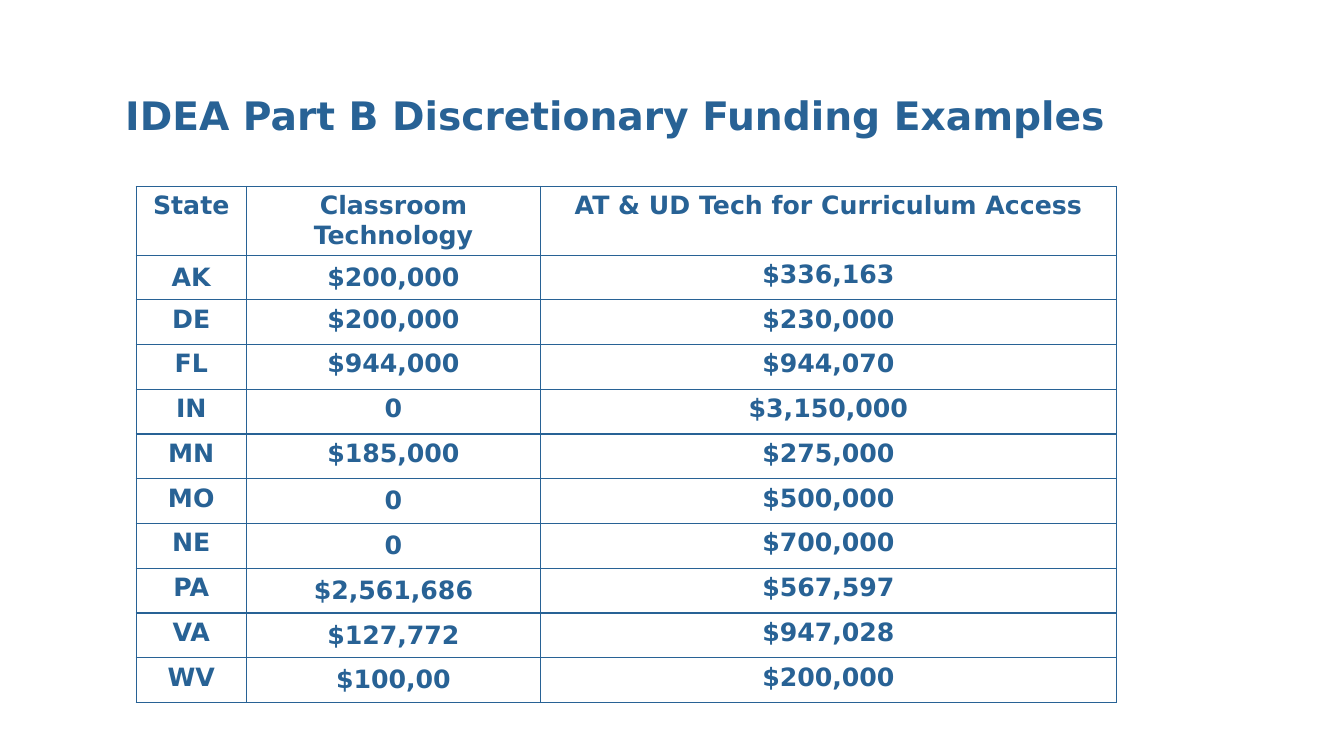
from lxml import etree
from pptx import Presentation, util as u
from pptx.dml import color
from pptx.enum import text
from pptx.oxml import ns

BLUE, WHITE = "286295", "FFFFFF"
TOP, MIDDLE = text.MSO_ANCHOR.TOP, text.MSO_ANCHOR.MIDDLE

presentation = Presentation()
presentation.slide_width = u.Inches(13.33)
presentation.slide_height = u.Inches(7.5)
# One percent of the slide in each direction
across = presentation.slide_width / 100
down = presentation.slide_height / 100
slide = presentation.slides.add_slide(presentation.slide_layouts[5])


def rgb(value):
    return color.RGBColor.from_string(value)


def write(frame, wording, size, anchor):
    frame.text = wording
    frame.word_wrap = True
    frame.vertical_anchor = anchor
    paragraph = frame.paragraphs[0]
    paragraph.alignment = text.PP_ALIGN.CENTER
    font = paragraph.runs[0].font
    font.name, font.size, font.bold = "DejaVu Sans", u.Pt(size), True
    font.color.rgb = rgb(BLUE)


# Title
title = slide.shapes.title
title.left, title.top = int(1.65 * across), int(4.93 * down)
title.width, title.height = int(89.2 * across), int(14 * down)
write(title.text_frame, "IDEA Part B Discretionary Funding Examples ", 28,
      text.MSO_ANCHOR.BOTTOM)

# Funding by state: wording and anchor of the middle column
funding = [
    ("State", "Classroom Technology", "AT & UD Tech for Curriculum Access"),
    ("AK", "$200,000", "$336,163"),
    ("DE", "$200,000", "$230,000"),
    ("FL", "$944,000", "$944,070"),
    ("IN", "0", "$3,150,000"),
    ("MN", "$185,000", "$275,000"),
    ("MO", "0", "$500,000"),
    ("NE", "0", "$700,000"),
    ("PA", "$2,561,686", "$567,597"),
    ("VA", "$127,772", "$947,028"),
    ("WV", "$100,00", "$200,000"),
]
middle_cells = {("AK", 0)} | {(state, 1) for state in ("AK", "MO", "NE", "PA", "VA", "WV")}
column_widths = [8.2, 21.9, 42.83]
row_heights = [8.93] + [5.92] * (len(funding) - 1)

# Table
table = slide.shapes.add_table(
    len(row_heights), len(column_widths), int(10.13 * across), int(24.67 * down),
    int(sum(column_widths) * across), int(sum(row_heights) * down)).table
for column, width in zip(table.columns, column_widths):
    column.width = int(width * across)
for row, height, values in zip(table.rows, row_heights, funding):
    row.height = int(height * down)
    for index, (cell, value) in enumerate(zip(row.cells, values)):
        write(cell.text_frame, value, 18, TOP)
        cell.vertical_anchor = MIDDLE if (values[0], index) in middle_cells else TOP
        cell.fill.solid()
        cell.fill.fore_color.rgb = rgb(WHITE)
        # Borders come before the fill in the cell properties
        properties = cell._tc.get_or_add_tcPr()
        for position, side in enumerate(("lnL", "lnR", "lnT", "lnB")):
            line = etree.Element(ns.qn("a:" + side), w=str(u.Pt(1)))
            fill = etree.SubElement(line, ns.qn("a:solidFill"))
            etree.SubElement(fill, ns.qn("a:srgbClr"), val=BLUE)
            properties.insert(position, line)

presentation.save("out.pptx")
